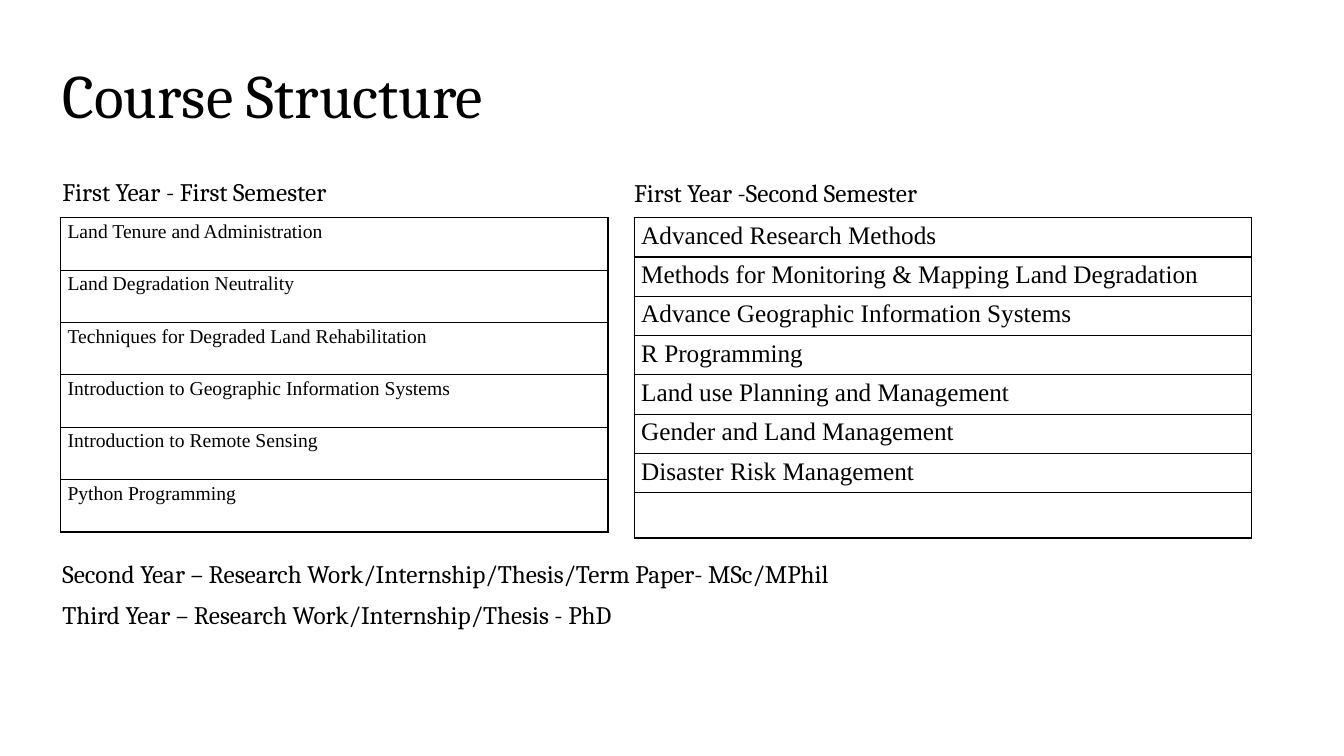
from lxml import etree
from pptx import Presentation
from pptx.dml.color import RGBColor
from pptx.enum.text import MSO_ANCHOR, MSO_AUTO_SIZE, PP_ALIGN
from pptx.oxml import parse_xml
from pptx.oxml.ns import nsdecls, qn
from pptx.util import Inches, Pt

BLACK = RGBColor(0, 0, 0)
WHITE = RGBColor(255, 255, 255)

prs = Presentation()
prs.slide_width, prs.slide_height = Inches(13.33), Inches(7.5)
s = prs.slides.add_slide(prs.slide_layouts[6])


def style(p, font, size):
    p.font.name = font
    p.font.size = Pt(size)
    p.font.color.rgb = BLACK


def add_text(text, left, top, width, height, size, wrap=True):
    tf = s.shapes.add_textbox(*map(Inches, (left, top, width, height))).text_frame
    tf.word_wrap = wrap
    p = tf.paragraphs[0]
    p.text = text
    style(p, "Cambria", size)
    return tf


tf = add_text("Course Structure", 0.52, 0.5, 11.5, 0.95, 44)
tf.vertical_anchor = MSO_ANCHOR.MIDDLE
tf.paragraphs[0].line_spacing = 0.9

first_semester = [
    "Land Tenure and Administration",
    "Land Degradation Neutrality",
    "Techniques for Degraded Land Rehabilitation",
    "Introduction to Geographic Information Systems",
    "Introduction to Remote Sensing",
    "Python Programming",
]
second_semester = [
    "Advanced Research Methods",
    "Methods for Monitoring & Mapping Land Degradation",
    "Advance Geographic Information Systems",
    "R Programming",
    "Land use Planning and Management",
    "Gender and Land Management",
    "Disaster Risk Management",
    "",
]
semesters = [
    (first_semester, 0.6, 5.43, [0.52] * 6, 14),
    (second_semester, 6.29, 6.12, [0.39] * 7 + [0.45], 18),
]
for courses, left, width, heights, size in semesters:
    frame = s.shapes.add_table(len(courses), 1, Inches(left), Inches(2.16),
                               Inches(width), Inches(sum(heights)))
    table = frame.table
    table.first_row = table.horz_banding = False
    for row, course, height in zip(table.rows, courses, heights):
        row.height = Inches(height)
        cell = row.cells[0]
        cell.margin_left = cell.margin_right = Inches(0.07)
        cell.margin_top = cell.margin_bottom = 0
        cell.fill.solid()
        cell.fill.fore_color.rgb = WHITE
        tcPr = cell._tc.get_or_add_tcPr()
        for i, side in enumerate("LRTB"):
            tcPr.insert(i, parse_xml(
                f'<a:ln{side} {nsdecls("a")} w="{Pt(1)}"><a:solidFill>'
                f'<a:srgbClr val="{BLACK}"/></a:solidFill></a:ln{side}>'))
        p = cell.text_frame.paragraphs[0]
        p.text = course
        p.alignment = PP_ALIGN.JUSTIFY
        p.line_spacing = 1.15
        p.space_after = Pt(6)
        tabs = etree.SubElement(p._p.get_or_add_pPr(), qn("a:tabLst"))
        etree.SubElement(tabs, qn("a:tab"), pos=str(Inches(1.03)), algn="l")
        style(p, "Times New Roman", size)

captions = [
    ("First Year - First Semester", 0.52, 1.7, 3.62, True),
    ("First Year -Second Semester", 6.19, 1.71, 3.62, True),
    ("Second Year – Research Work/Internship/Thesis/Term Paper- MSc/MPhil",
     0.52, 5.49, 8.15, False),
    ("Third Year – Research Work/Internship/Thesis - PhD", 0.52, 5.9, 5.92, False),
]
for text, left, top, width, wrap in captions:
    tf = add_text(text, left, top, width, 0.4, 18, wrap)
    tf.auto_size = MSO_AUTO_SIZE.SHAPE_TO_FIT_TEXT

prs.save("out.pptx")
